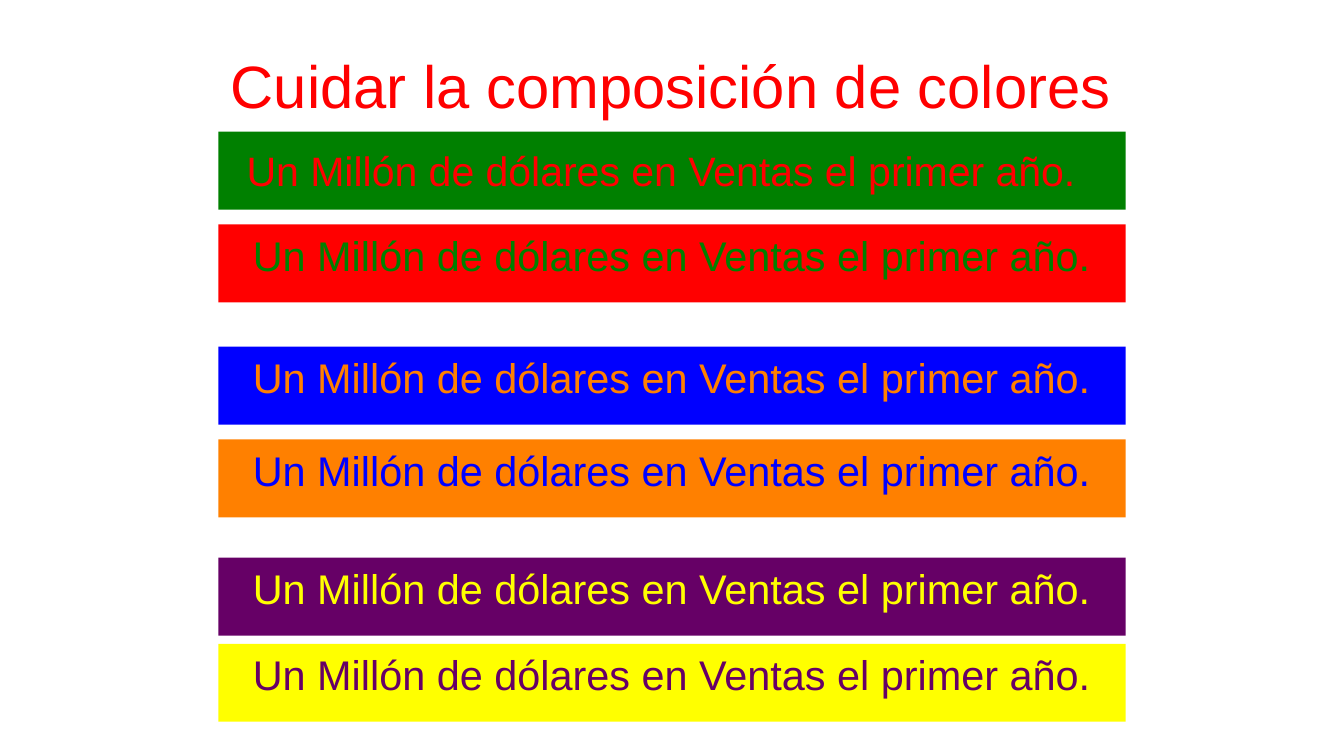
from pptx import Presentation
from pptx.dml.color import RGBColor
from pptx.enum import shapes, text
from pptx.util import Inches, Pt

COLORS = {
    "red": "FF0000", "green": "008000", "blue": "0000FF",
    "orange": "FF8000", "purple": "660066", "yellow": "FFFF00",
}
TITLE = "Cuidar la composición de colores"
MESSAGE = "Un Millón de dólares en Ventas el primer año."
# Each pair is shown both ways round: colours and the tops of its two bars
PAIRS = [
    ("green", "red", (0.98, 1.67)),
    ("blue", "orange", (2.58, 3.27)),
    ("purple", "yellow", (4.15, 4.79)),
]
BAR_WIDTH, BAR_HEIGHT = Inches(6.75), Inches(0.58)


def rgb(name):
    return RGBColor.from_string(COLORS[name])


def write(sp, words, size, color, inset_x, inset_y, align):
    tf = sp.text_frame
    tf.word_wrap = True
    tf.vertical_anchor = text.MSO_ANCHOR.TOP
    tf.margin_left = tf.margin_right = Inches(inset_x)
    tf.margin_top = tf.margin_bottom = Inches(inset_y)
    tf.text = words
    p = tf.paragraphs[0]
    p.alignment = align
    font = p.runs[0].font
    font.name, font.size = "Arial", Pt(size)
    font.color.rgb = rgb(color)
    return p


def add_bar(slide, left, top, fill):
    sp = slide.shapes.add_shape(
        shapes.MSO_SHAPE.RECTANGLE, left, Inches(top), BAR_WIDTH, BAR_HEIGHT)
    sp.shadow.inherit = False
    sp.fill.solid()
    sp.fill.fore_color.rgb = rgb(fill)
    sp.line.fill.background()
    return sp


# Widescreen 16:9 slide
prs = Presentation()
prs.slide_width = Inches(10)
prs.slide_height = prs.slide_width * 9 // 16
slide = prs.slides.add_slide(prs.slide_layouts[6])

# Colour bars, centred: the first has left-aligned text and wider insets
bar_left = (prs.slide_width - BAR_WIDTH) // 2
bars = [(top, fill, ink) for a, b, tops in PAIRS
        for top, fill, ink in zip(tops, (a, b), (b, a))]
for i, (top, fill, ink) in enumerate(bars):
    sp = add_bar(slide, bar_left, top, fill)
    if i == 0:
        write(sp, MESSAGE, 22, ink, 0.21, 0.1, text.PP_ALIGN.LEFT)
    else:
        write(sp, MESSAGE, 22.2, ink, 0.07, 0.04, text.PP_ALIGN.CENTER)

# Title
title = slide.shapes.add_textbox(
    Inches(-0.01), 0, Inches(10.01), Inches(0.98))
p = write(title, TITLE, 32, "red", 0.1, 0.1, text.PP_ALIGN.CENTER)
p.line_spacing = 1.5

prs.save("out.pptx")
